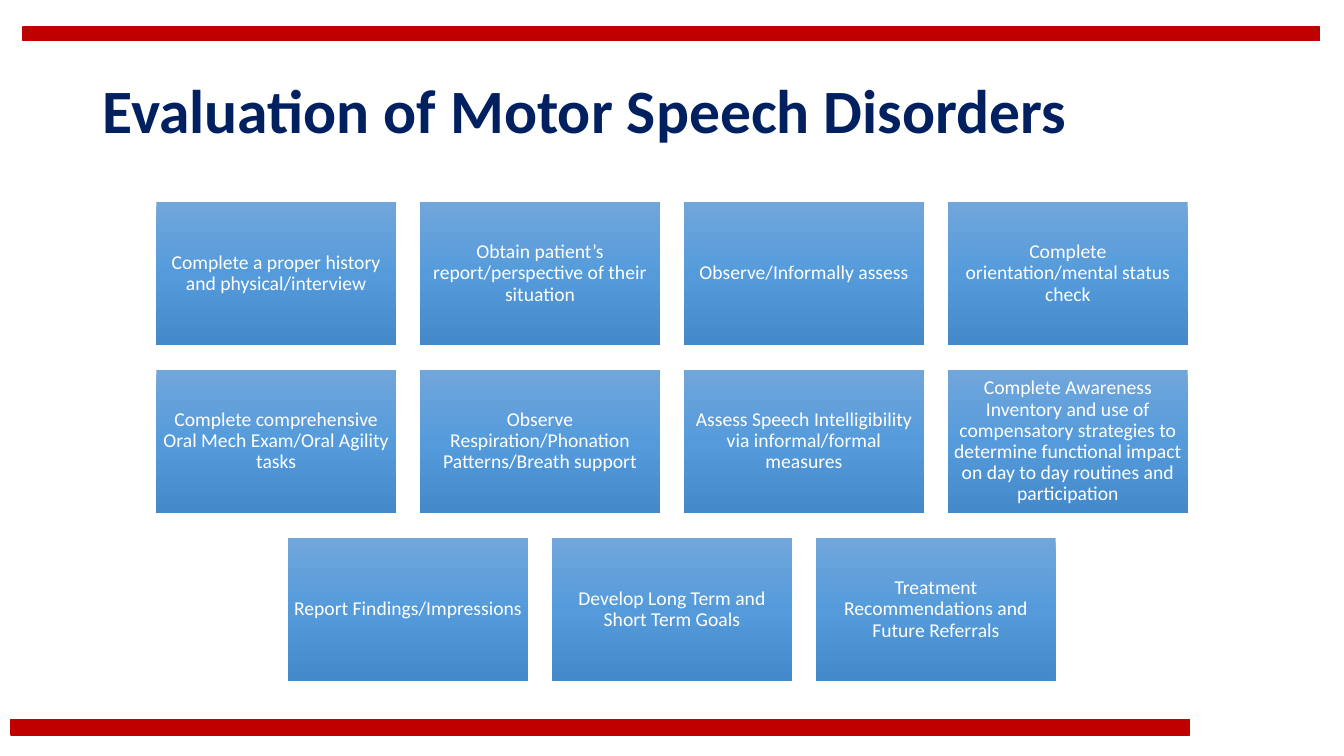
from copy import deepcopy

from pptx import Presentation
from pptx.dml.color import RGBColor
from pptx.enum import shapes, text
from pptx.oxml.ns import qn
from pptx.util import Inches, Pt

RED = RGBColor(0xC0, 0x00, 0x00)
NAVY = RGBColor(0x00, 0x20, 0x60)
WHITE = RGBColor(0xFF, 0xFF, 0xFF)
STEP_GRADIENT = [
    (0, RGBColor(0x71, 0xA6, 0xDB)),
    (0.5, RGBColor(0x55, 0x9B, 0xDB)),
    (1, RGBColor(0x44, 0x8A, 0xCA)),
]
FONT = "Calibri"
GAP = 0.24

EVALUATION_STEPS = [
    [
        "Complete a proper history and physical/interview",
        "Obtain patient’s report/perspective of their situation",
        "Observe/Informally assess",
        "Complete orientation/mental status check",
    ],
    [
        "Complete comprehensive Oral Mech Exam/Oral Agility tasks",
        "Observe Respiration/Phonation Patterns/Breath support",
        "Assess Speech Intelligibility via informal/formal measures",
        "Complete Awareness Inventory and use of compensatory strategies "
        "to determine functional impact on day to day routines and participation",
    ],
    [
        "Report Findings/Impressions",
        "Develop Long Term and Short Term Goals",
        "Treatment Recommendations and Future Referrals",
    ],
]


def add_rectangle(slide, box):
    rectangle = slide.shapes.add_shape(
        shapes.MSO_SHAPE.RECTANGLE, *map(Inches, box)
    )
    rectangle.shadow.inherit = False
    return rectangle


def write(frame, words, size, color, bold=False):
    frame.word_wrap = True
    frame.vertical_anchor = text.MSO_ANCHOR.MIDDLE
    paragraph = frame.paragraphs[0]
    paragraph.line_spacing = 0.9
    run = paragraph.add_run()
    run.text = words
    run.font.name = FONT
    run.font.size = Pt(size)
    run.font.bold = bold
    run.font.color.rgb = color
    return paragraph


def add_bar(slide, box):
    bar = add_rectangle(slide, box)
    bar.fill.solid()
    bar.fill.fore_color.rgb = RED
    bar.line.color.rgb = RED
    bar.line.width = Pt(1)


def add_title(slide, box, words):
    title = slide.shapes.add_textbox(*map(Inches, box))
    write(title.text_frame, words, 44, NAVY, bold=True)


def add_step(slide, box, words):
    step = add_rectangle(slide, box)
    step.line.fill.background()
    step.fill.gradient()
    step.fill.gradient_angle = 270
    stops = step.element.spPr.find(".//" + qn("a:gsLst"))
    stops.insert(1, deepcopy(stops[0]))
    for stop, (position, color) in zip(step.fill.gradient_stops, STEP_GRADIENT):
        stop.position = position
        stop.color.rgb = color
    frame = step.text_frame
    frame.margin_left = frame.margin_right = Inches(0.05)
    frame.margin_top = frame.margin_bottom = Inches(0.06)
    write(frame, words, 14, WHITE).alignment = text.PP_ALIGN.CENTER


def add_step_grid(slide, box, rows):
    left, top, width, height = box
    columns = max(map(len, rows))
    step_width = (width - GAP * (columns - 1)) / columns
    step_height = (height - GAP * (len(rows) - 1)) / len(rows)
    for row_index, row in enumerate(rows):
        indent = (columns - len(row)) * (step_width + GAP) / 2
        y = top + row_index * (step_height + GAP)
        for column, words in enumerate(row):
            x = left + indent + column * (step_width + GAP)
            add_step(slide, (x, y, step_width, step_height), words)


def main():
    deck = Presentation()
    deck.slide_width = Inches(13.33)
    deck.slide_height = Inches(7.5)
    slide = deck.slides.add_slide(deck.slide_layouts[6])
    add_bar(slide, (0.11, 7.14, 11.69, 0.15))
    add_bar(slide, (0.23, 0.27, 12.86, 0.13))
    add_title(slide, (0.92, 0.4, 11.5, 1.45), "Evaluation of Motor Speech Disorders")
    add_step_grid(slide, (1.55, 2, 10.23, 4.76), EVALUATION_STEPS)
    deck.save("out.pptx")


if __name__ == "__main__":
    main()
